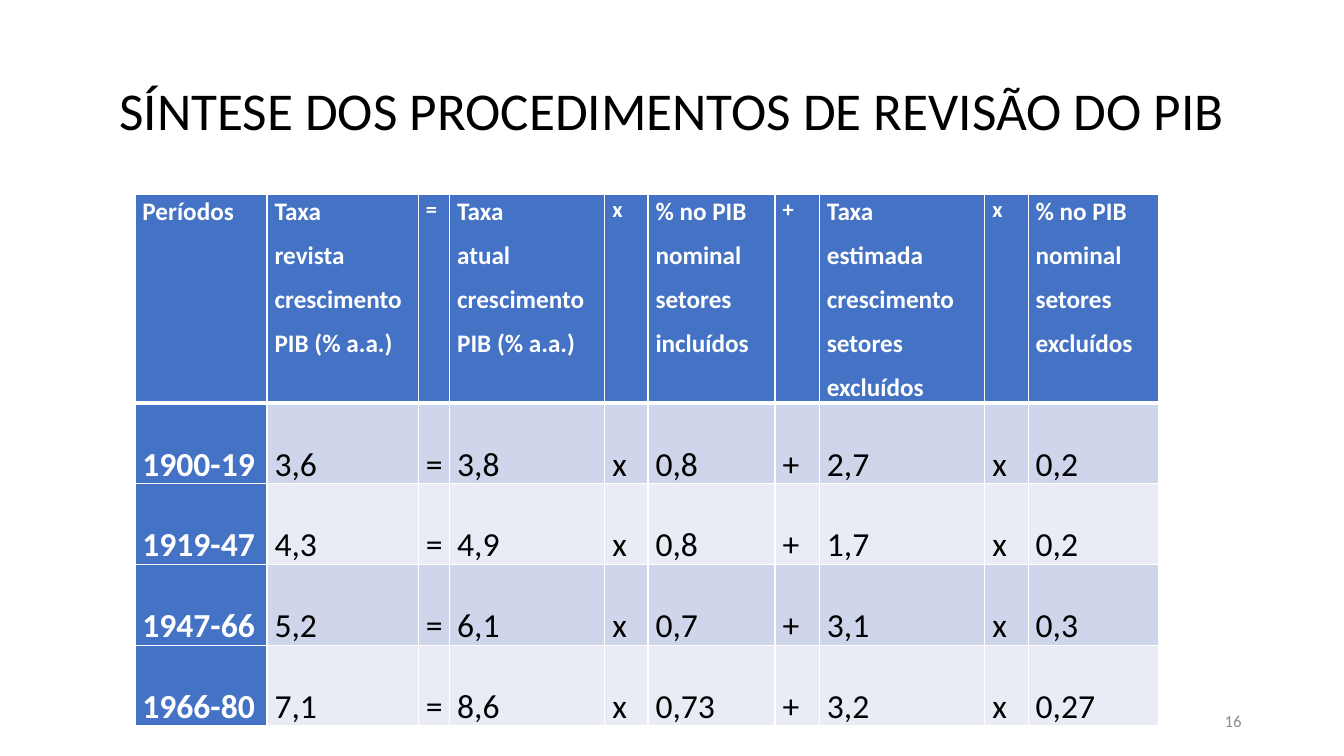
from lxml.etree import SubElement as Sub
from pptx import Presentation as Deck
from pptx.dml.color import RGBColor as Rgb
from pptx.enum.text import MSO_ANCHOR as Anchor, PP_ALIGN as Align
from pptx.oxml.ns import qn
from pptx.util import Cm, Pt

BLUE, WHITE, BLACK = "4472C4", "FFFFFF", "000000"
BANDS = ["CFD5EA", "E9EBF5"]
SIGNS = ["=", "x", "+", "x"]
WIDTHS = [3.33, 3.81, 0.79, 3.91, 1.09, 3.2, 1.12, 4.17, 1.09, 3.3]
HEADS = [
    "Períodos",
    "Taxa\nrevista\ncrescimento\nPIB (% a.a.)",
    "Taxa\natual\ncrescimento\nPIB (% a.a.)",
    "% no PIB\nnominal\nsetores\nincluídos",
    "Taxa\nestimada\ncrescimento\nsetores\nexcluídos",
    "% no PIB\nnominal\nsetores\nexcluídos",
]
ROWS = [
    ["1900-19", "3,6", "3,8", "0,8", "2,7", "0,2"],
    ["1919-47", "4,3", "4,9", "0,8", "1,7", "0,2"],
    ["1947-66", "5,2", "6,1", "0,7", "3,1", "0,3"],
    ["1966-80", "7,1", "8,6", "0,73", "3,2", "0,27"],
]


def color(code):
    """Turn a hex string into a colour."""
    return Rgb.from_string(code)


def write(frame, text, size=18, ink=BLACK, bold=False, align=Align.LEFT,
          lead=1.0, after=0):
    """Fill a text frame with one paragraph per line of text."""
    frame.word_wrap = True
    for i, line in enumerate(text.split("\n")):
        para = frame.add_paragraph() if i else frame.paragraphs[0]
        para.alignment, para.line_spacing = align, lead
        para.space_after = Pt(after)
        run = para.add_run()
        run.text = line
        font = run.font
        font.name, font.size, font.bold = "Calibri", Pt(size), bold
        font.color.rgb = color(ink)


def label(slide, text, left, top, width, height, **form):
    """Add a text box with its text centred in height."""
    box = slide.shapes.add_textbox(Cm(left), Cm(top), Cm(width), Cm(height))
    box.text_frame.vertical_anchor = Anchor.MIDDLE
    write(box.text_frame, text, **form)


def border(cell, **sides):
    """Draw white cell borders with a width in points for each side."""
    props = cell._tc.get_or_add_tcPr()
    for side in "LRTB":
        line = Sub(props, qn(f"a:ln{side}"), w=str(Pt(sides.get(side, 1))))
        Sub(Sub(line, qn("a:solidFill")), qn("a:srgbClr"), val=WHITE)


def paint(cell, text, fill, edges, **form):
    """Set the borders, fill, margins and text of a cell."""
    border(cell, **edges)
    cell.fill.solid()
    cell.fill.fore_color.rgb = color(fill)
    cell.margin_left = cell.margin_right = Cm(0.19)
    cell.margin_top = cell.margin_bottom = 0
    write(cell.text_frame, text, after=8, **form)


def weave(items):
    """Put the formula signs between the terms of a row."""
    row = items[:2]
    for sign, term in zip(SIGNS, items[2:]):
        row += [sign, term]
    return row


def grid(slide):
    """Add the table of growth rates by period."""
    shape = slide.shapes.add_table(len(ROWS) + 1, len(WIDTHS), Cm(3.4),
                                   Cm(4.9), Cm(sum(WIDTHS)), Cm(11.78))
    table = shape.table
    table.horz_banding = False
    for col, width in zip(table.columns, WIDTHS):
        col.width = Cm(width)
    for r, items in enumerate([HEADS] + ROWS):
        table.rows[r].height = Cm(1.63 if r else 5.26)
        edges = {0: {"B": 3}, 1: {"T": 3}}.get(r, {})
        for c, text in enumerate(weave(items)):
            dark = r == 0 or c == 0
            size = 24 if r else 16 if text in SIGNS else 18
            paint(table.cell(r, c), text, BLUE if dark else BANDS[(r - 1) % 2],
                  edges, size=size, ink=WHITE if dark else BLACK, bold=dark,
                  lead=2.0 if r else 1.07)


def main():
    """Build the slide and save it."""
    deck = Deck()
    deck.slide_width, deck.slide_height = Cm(33.87), Cm(19.05)
    slide = deck.slides.add_slide(deck.slide_layouts[6])
    label(slide, "SÍNTESE DOS PROCEDIMENTOS DE REVISÃO DO PIB", 2.33, 1.01,
          29.21, 3.68, size=38, align=Align.CENTER, lead=0.9)
    grid(slide)
    label(slide, "16", 23.92, 17.66, 7.62, 1.01, size=12, ink="8C8C8C",
          align=Align.RIGHT)
    deck.save("out.pptx")


if __name__ == "__main__":
    main()
